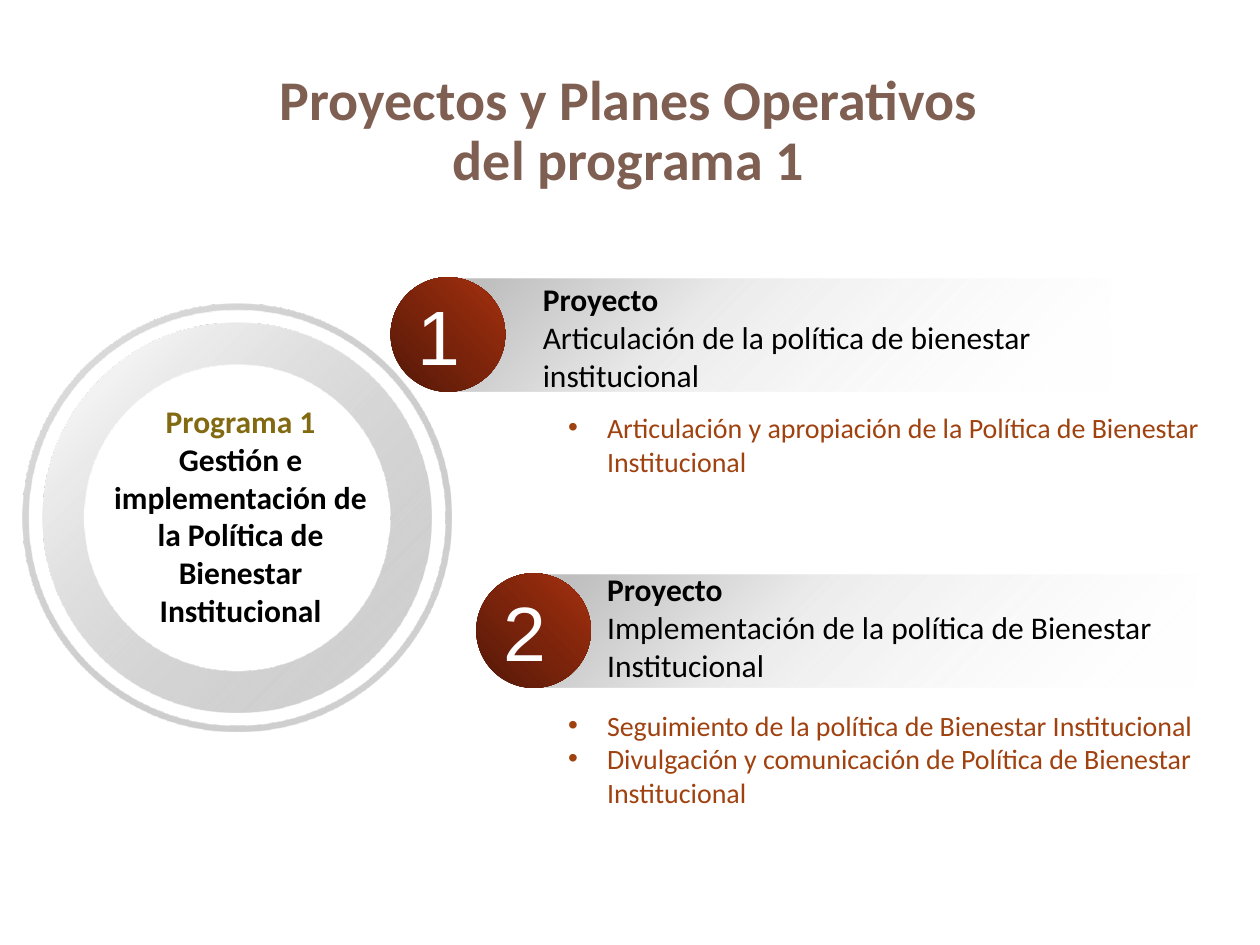
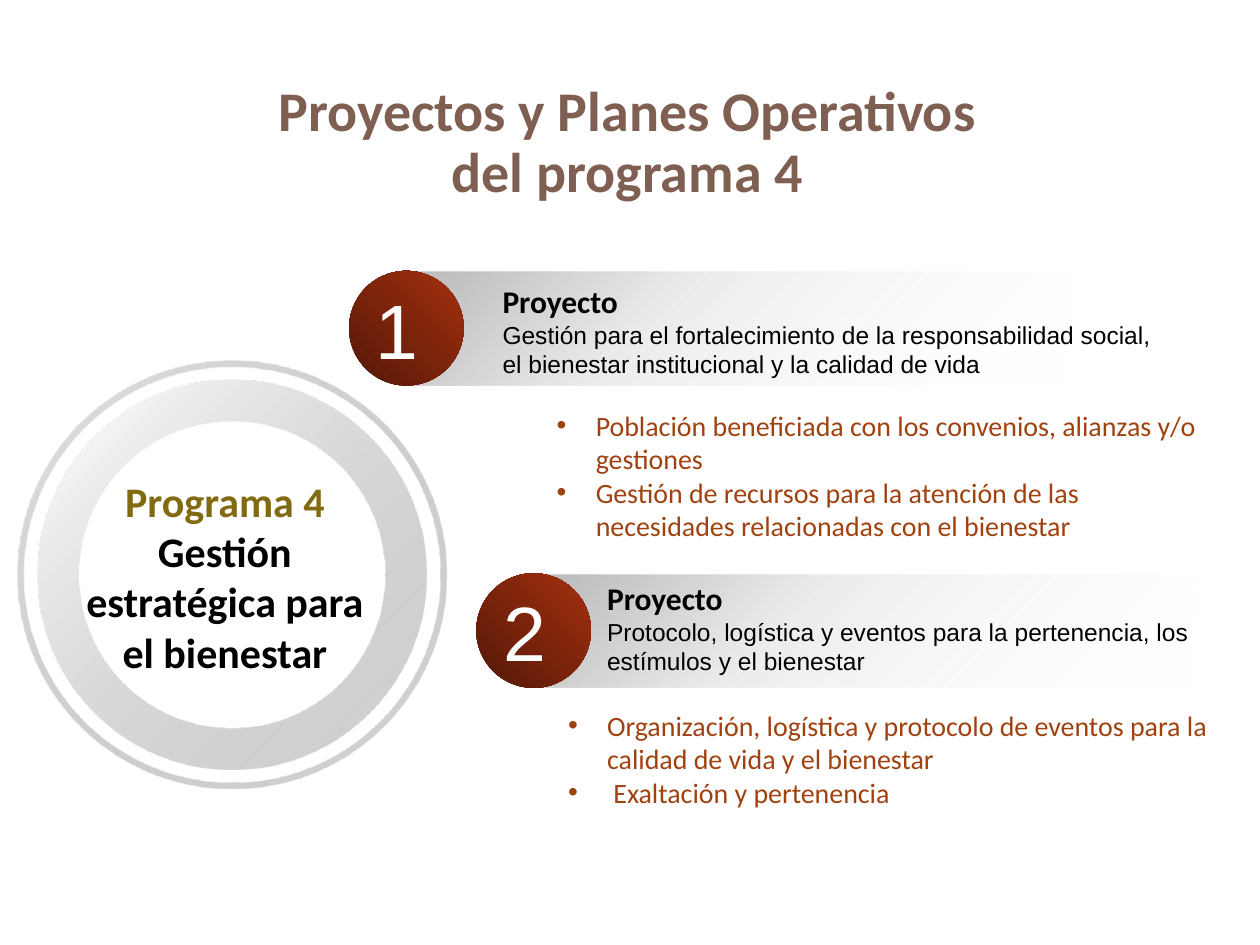
"""Build two slides on the projects and operating plans of programmes 1 and 4."""
from lxml import etree
from pptx import Presentation
from pptx.dml.color import RGBColor
from pptx.enum.shapes import MSO_SHAPE
from pptx.enum.text import MSO_ANCHOR, MSO_AUTO_SIZE, PP_ALIGN
from pptx.oxml import parse_xml
from pptx.oxml.ns import nsdecls, qn
from pptx.util import Inches, Pt

CENTER, LEFT = PP_ALIGN.CENTER, PP_ALIGN.LEFT
MIDDLE, TOP = MSO_ANCHOR.MIDDLE, MSO_ANCHOR.TOP
GROW = MSO_AUTO_SIZE.SHAPE_TO_FIT_TEXT
RECTANGLE, OVAL, DONUT = MSO_SHAPE.RECTANGLE, MSO_SHAPE.OVAL, MSO_SHAPE.DONUT

COLORS = {
    "title": "7F5F52", "program": "826A12", "plan": "A04210",
    "text": "000000", "number": "FFFFFF",
}
GRADIENTS = {
    "bar": (45, [(5, "BFBFBF", 100), (37, "BFBFBF", 31), (100, "FFFFFF", 0)]),
    "badge": (315, [(0, "521808", 100), (50, "7C240B", 100), (100, "A5300F", 100)]),
    "band": (45, [(16, "F2F2F2", 100), (87, "A6A6A6", 52)]),
    "rim": (45, [(16, "D9D9D9", 100), (87, "A6A6A6", 52)]),
}
BAR_SIZE = (5.25, 0.9)
BADGE = 0.91
BAND, RIM = 3.09, 3.4
PLAN_INDENT = 0.31

SLIDES = [
    {
        "title": "Proyectos y Planes Operativos\ndel programa 1",
        "title_at": (0.49, 0.51, 9, 1.08),
        "program": ("Programa 1",
                    "Gestión e implementación de la Política de Bienestar Institucional"),
        "program_size": 18,
        "program_at": (0.73, 3.13, 2.36, 1.92),
        "ring_center": (1.88, 4.11),
        "detail_font": ("Calibri", 18),
        "projects": [
            {
                "name": "Articulación de la política de bienestar institucional",
                "badge_at": (3.1, 2.2),
                "name_at": (4.21, 2.17, 4.66, 1.01),
                "plans": ["Articulación y apropiación de la Política de Bienestar Institucional"],
                "plans_at": (4.41, 3.21, 5.38, 0.64),
            },
            {
                "name": "Implementación de la política de Bienestar Institucional",
                "badge_at": (3.78, 4.55),
                "name_at": (4.72, 4.47, 5.79, 1.01),
                "plans": ["Seguimiento de la política de Bienestar Institucional",
                          "Divulgación y comunicación de Política de Bienestar Institucional"],
                "plans_at": (4.41, 5.57, 5.38, 0.91),
            },
        ],
    },
    {
        "title": "Proyectos y Planes Operativos\ndel programa 4",
        "title_at": (0.48, 0.6, 9, 1.08),
        "program": ("Programa 4", "Gestión estratégica para el bienestar"),
        "program_size": 24,
        "program_at": (0.48, 3.71, 2.61, 1.72),
        "ring_center": (1.84, 4.56),
        "detail_font": ("Arial", 14),
        "projects": [
            {
                "name": "Gestión para el fortalecimiento de la responsabilidad social, "
                        "el bienestar institucional y la calidad de vida",
                "badge_at": (2.77, 2.15),
                "name_at": (3.89, 2.18, 5.36, 0.88),
                "plans": ["Población beneficiada con los convenios, alianzas y/o gestiones",
                          "Gestión de recursos para la atención de las necesidades "
                          "relacionadas con el bienestar"],
                "plans_at": (4.32, 3.19, 5.38, 1.18),
            },
            {
                "name": "Protocolo, logística y eventos para la pertenencia, "
                        "los estímulos y el bienestar",
                "badge_at": (3.78, 4.55),
                "name_at": (4.72, 4.54, 5.14, 0.88),
                "plans": ["Organización, logística y protocolo de eventos para la "
                          "calidad de vida y el bienestar",
                          " Exaltación y pertenencia"],
                "plans_at": (4.41, 5.57, 5.38, 1.18),
            },
        ],
    },
]


def write(frame, lines, align=LEFT, anchor=TOP):
    """Write (text, font, size, colour, bold) lines, one paragraph each."""
    frame.word_wrap = True
    frame.vertical_anchor = anchor
    for index, (text, font, size, color, bold) in enumerate(lines):
        para = frame.add_paragraph() if index else frame.paragraphs[0]
        para.text = text
        para.alignment = align
        for span in para.runs:
            span.font.name, span.font.size, span.font.bold = font, Pt(size), bold
            span.font.color.rgb = RGBColor.from_string(COLORS[color])


def add_text(shapes, at, lines, align=LEFT, anchor=TOP):
    """Add a text box that grows with its text and return its frame."""
    frame = shapes.add_textbox(*map(Inches, at)).text_frame
    write(frame, lines, align, anchor)
    frame.auto_size = GROW
    return frame


def add_gradient_shape(shapes, kind, at, gradient):
    """Add an unlined preset shape with a linear gradient."""
    shape = shapes.add_shape(kind, *map(Inches, at))
    shape.shadow.inherit = False
    shape.line.fill.background()
    angle, stops = GRADIENTS[gradient]
    stop_xml = "".join(
        f'<a:gs pos="{place * 1000}"><a:srgbClr val="{color}">'
        f'<a:alpha val="{alpha * 1000}"/></a:srgbClr></a:gs>'
        for place, color, alpha in stops)
    fill = parse_xml(
        f'<a:gradFill {nsdecls("a")} rotWithShape="1"><a:gsLst>{stop_xml}</a:gsLst>'
        f'<a:lin ang="{angle * 60000}" scaled="0"/></a:gradFill>')
    shape._element.spPr.find(qn("a:prstGeom")).addnext(fill)
    return shape


def add_project(page, number, project, detail_font):
    """Add a numbered project bar and the bulleted plans below it."""
    shapes = page.shapes.add_group_shape().shapes
    left, top = project["badge_at"]
    add_gradient_shape(shapes, RECTANGLE, (left + 0.46, top + 0.01, *BAR_SIZE), "bar")
    add_text(shapes, project["name_at"],
             [("Proyecto", "Calibri", 18, "text", True),
              (project["name"], *detail_font, "text", False)], anchor=MIDDLE)
    badge = add_gradient_shape(shapes, OVAL, (left, top, BADGE, BADGE), "badge")
    frame = badge.text_frame
    frame.margin_left = frame.margin_right = Inches(0.08)
    frame.margin_top = frame.margin_bottom = Inches(0.1)
    write(frame, [(str(number), "Arial", 44, "number", False)], anchor=MIDDLE)

    plans = add_text(page.shapes, project["plans_at"],
                     [(plan, "Calibri", 16, "plan", False) for plan in project["plans"]])
    for para in plans.paragraphs:
        properties = para._p.get_or_add_pPr()
        properties.set("marL", str(Inches(PLAN_INDENT)))
        properties.set("indent", str(-Inches(PLAN_INDENT)))
        etree.SubElement(properties, qn("a:buFont"), typeface="Arial")
        etree.SubElement(properties, qn("a:buChar"), char="•")


def add_program(page, content):
    """Add the double ring that holds the programme name."""
    shapes = page.shapes.add_group_shape().shapes
    x, y = content["ring_center"]
    for size, thickness, gradient in ((BAND, 0.107, "band"), (RIM, 0.015, "rim")):
        ring = add_gradient_shape(
            shapes, DONUT, (x - size / 2, y - size / 2, size, size), gradient)
        ring.adjustments[0] = thickness
    lines = [(text, "Calibri", content["program_size"], color, True)
             for text, color in zip(content["program"], ("program", "text"))]
    add_text(shapes, content["program_at"], lines, CENTER, MIDDLE)


def add_title(page, content):
    """Add the centred two-line title."""
    frame = page.shapes.add_textbox(*map(Inches, content["title_at"])).text_frame
    write(frame, [(content["title"], "Calibri", 32, "title", True)], CENTER, MIDDLE)
    frame.paragraphs[0].line_spacing = 0.9


def main():
    """Build and save the deck."""
    deck = Presentation()
    deck.slide_width, deck.slide_height = Inches(10), Inches(7.5)
    for content in SLIDES:
        page = deck.slides.add_slide(deck.slide_layouts[6])
        for number, project in enumerate(content["projects"], 1):
            add_project(page, number, project, content["detail_font"])
        add_program(page, content)
        add_title(page, content)
    deck.save("out.pptx")


if __name__ == "__main__":
    main()
